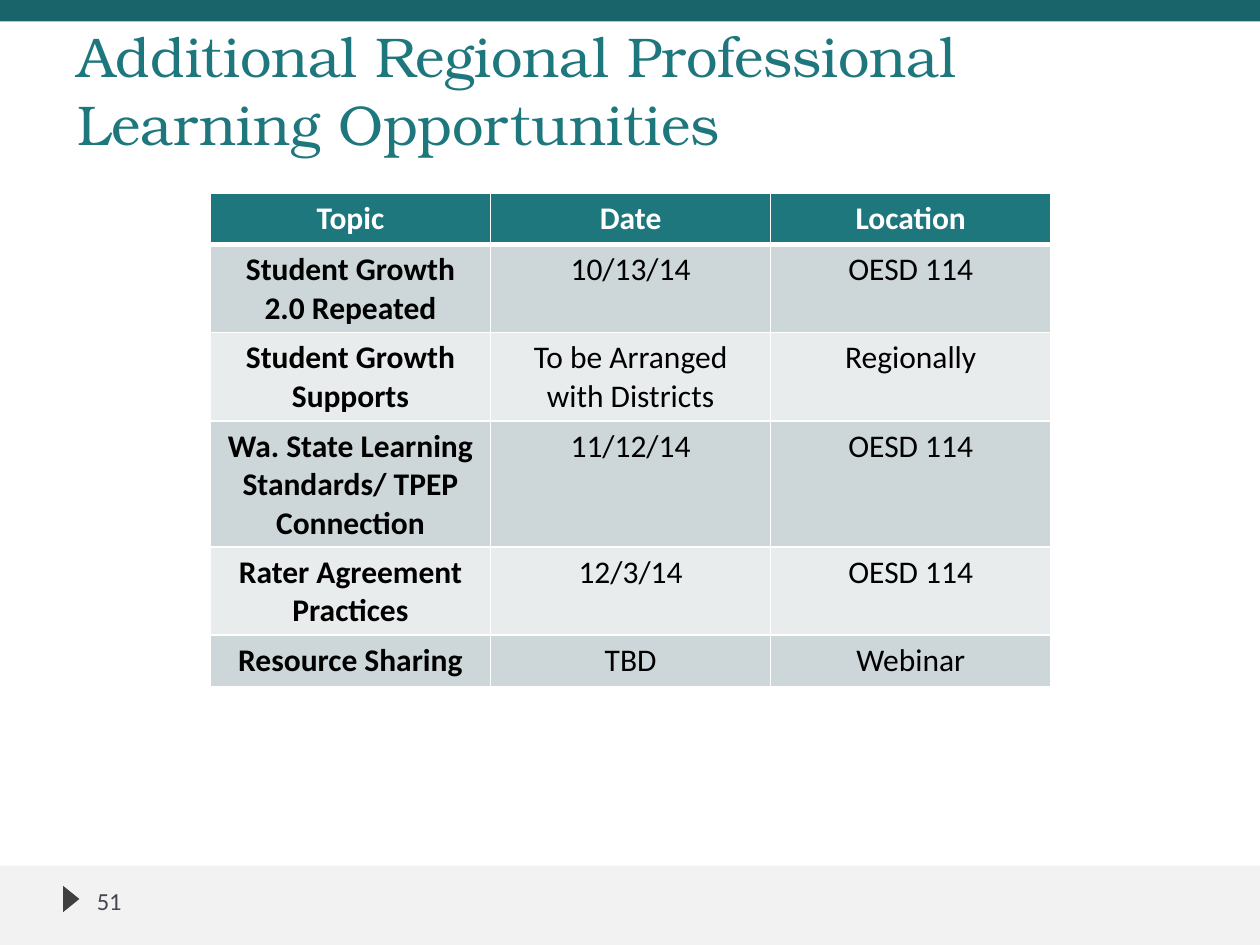
from dataclasses import dataclass

from lxml.etree import SubElement
from pptx import Presentation
from pptx.dml.color import RGBColor
from pptx.enum.shapes import MSO_SHAPE
from pptx.enum.text import MSO_ANCHOR, PP_ALIGN
from pptx.oxml.ns import qn
from pptx.util import Inches, Pt


@dataclass(frozen=True)
class Theme:
    teal: str = "1F777E"
    dark_teal: str = "19646B"
    footer: str = "F2F2F2"
    marker: str = "3F3F3F"
    number: str = "464653"
    white: str = "FFFFFF"
    black: str = "000000"
    bands: tuple = ("CDD6D8", "E8ECEC")
    title_font: str = "TeX Gyre Bonum"
    body_font: str = "Calibri"
    title_size: int = 32
    table_size: int = 18
    number_size: int = 14
    border: int = 1
    header_border: int = 3


THEME = Theme()

ROWS = [
    ("Topic", "Date", "Location"),
    ("Student Growth 2.0 Repeated", "10/13/14", "OESD 114"),
    ("Student Growth Supports", "To be Arranged with Districts", "Regionally"),
    ("Wa. State Learning Standards/ TPEP Connection", "11/12/14", "OESD 114"),
    ("Rater Agreement Practices", "12/3/14", "OESD 114"),
    ("Resource Sharing", "TBD", "Webinar"),
]


def write_text(frame, text, color, **formats):
    para = frame.paragraphs[0]
    span = para.add_run()
    span.text = text
    span.font.color.rgb = RGBColor.from_string(color)
    for name, value in formats.items():
        setattr(span.font, name, value)
    return para


def add_label(page, box, anchor, text, color, **formats):
    label = page.shapes.add_textbox(*map(Inches, box))
    label.text_frame.word_wrap = True
    label.text_frame.vertical_anchor = anchor
    write_text(label.text_frame, text, color, **formats)


def add_block(page, kind, box, color):
    block = page.shapes.add_shape(kind, *map(Inches, box))
    block.shadow.inherit = False
    block.fill.solid()
    block.fill.fore_color.rgb = RGBColor.from_string(color)
    block.line.fill.background()
    return block


def set_borders(cell, widths):
    properties = cell._tc.get_or_add_tcPr()
    # Borders must come before the fill in the cell properties
    for index, (side, width) in enumerate(widths.items()):
        line = SubElement(properties, qn(f"a:{side}"), w=str(Pt(width)))
        fill = SubElement(line, qn("a:solidFill"))
        SubElement(fill, qn("a:srgbClr"), val=THEME.white)
        properties.insert(index, line)


def add_header(page, box):
    left, top, width, height = box
    bar = 0.17
    add_block(page, MSO_SHAPE.RECTANGLE, (left, top, width, bar), THEME.dark_teal)
    add_label(page, (left + 0.52, top + bar, width - 0.98, height - bar),
              MSO_ANCHOR.BOTTOM,
              "Additional Regional Professional Learning Opportunities",
              THEME.teal, name=THEME.title_font, size=Pt(THEME.title_size))


def add_footer(page, box):
    left, top, width, height = box
    add_block(page, MSO_SHAPE.RECTANGLE, box, THEME.footer)
    marker = add_block(page, MSO_SHAPE.ISOSCELES_TRIANGLE,
                       (left + 0.46, top + 0.2, 0.21, 0.13), THEME.marker)
    marker.rotation = 90
    add_label(page, (left + 0.67, top + 0.08, 2.17, 0.4), MSO_ANCHOR.MIDDLE,
              "51", THEME.number, name=THEME.body_font, size=Pt(THEME.number_size))


def add_schedule(page, box):
    frame = page.shapes.add_table(len(ROWS), len(ROWS[0]), *map(Inches, box))
    for row_index, row in enumerate(ROWS):
        is_header = row_index == 0
        fill = THEME.teal if is_header else THEME.bands[(row_index - 1) % 2]
        widths = dict.fromkeys(("lnL", "lnR", "lnT", "lnB"), THEME.border)
        if is_header:
            widths["lnB"] = THEME.header_border
        elif row_index == 1:
            widths["lnT"] = THEME.header_border
        for column_index, text in enumerate(row):
            cell = frame.table.cell(row_index, column_index)
            cell.fill.solid()
            cell.fill.fore_color.rgb = RGBColor.from_string(fill)
            set_borders(cell, widths)
            para = write_text(cell.text_frame, text,
                              THEME.white if is_header else THEME.black,
                              name=THEME.body_font, size=Pt(THEME.table_size),
                              bold=is_header or column_index == 0)
            para.alignment = PP_ALIGN.CENTER


def main():
    deck = Presentation()
    deck.slide_width, deck.slide_height = Inches(10), Inches(7.5)
    page = deck.slides.add_slide(deck.slide_layouts[6])
    add_footer(page, (0, 6.87, 10, 0.63))
    add_header(page, (0, 0, 10, 1.29))
    # Rows grow to fit wrapped text
    add_schedule(page, (1.67, 1.53, 6.67, 0.41 * len(ROWS)))
    deck.save("out.pptx")


if __name__ == "__main__":
    main()
